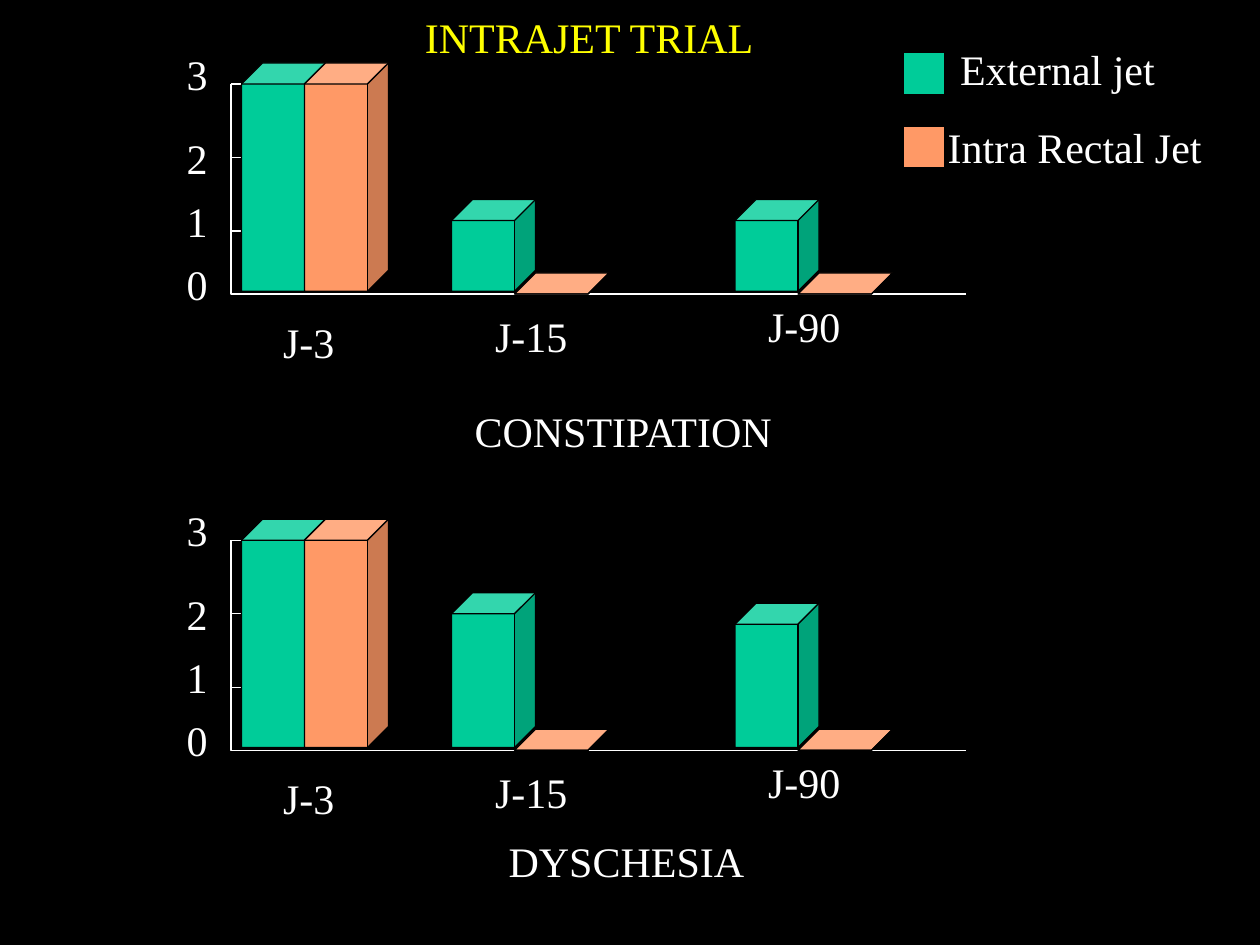
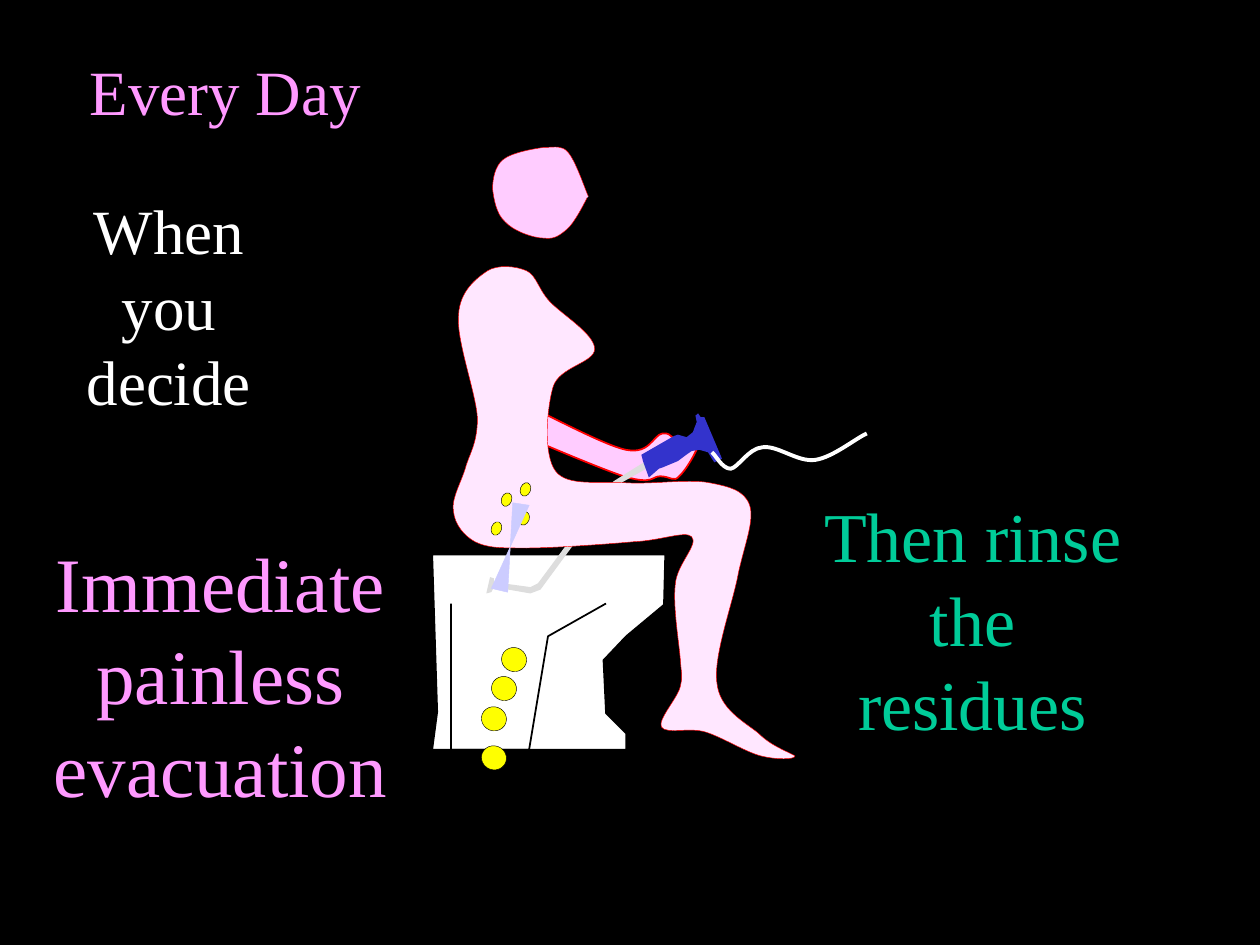
from dataclasses import dataclass
from typing import Optional

from lxml import etree
from pptx import Presentation
from pptx.dml.color import RGBColor
from pptx.enum.shapes import MSO_CONNECTOR as Connector
from pptx.enum.shapes import MSO_SHAPE as Preset
from pptx.enum.text import MSO_ANCHOR as Anchor
from pptx.enum.text import MSO_AUTO_SIZE as AutoSize
from pptx.enum.text import PP_ALIGN as Align
from pptx.oxml.ns import qn
from pptx.util import Pt


@dataclass(frozen=True)
class Theme:
    """Colours, font and type sizes shared by the slides."""
    font: str = "Times New Roman"
    black: str = "000000"
    white: str = "FFFFFF"
    yellow: str = "FFFF00"
    green: str = "00CC99"
    orange: str = "FF9966"
    pink: str = "FF99FF"
    skin: str = "FFE7FF"
    limb: str = "FFCCFF"
    red: str = "FF0000"
    blue: str = "3333CC"
    grey: str = "DDDDDD"
    water: str = "CCCCFF"
    label: float = 24
    heading: float = 36
    rinse: float = 40
    result: float = 44
    space_before: float = 0.06
    hairline: float = 0.25
    thin: float = 0.75
    medium: float = 1
    thick: float = 2.25


THEME = Theme()
GRID = 0.72


@dataclass(frozen=True)
class Box:
    """A rectangle in points."""
    left: float
    top: float
    width: float
    height: float


@dataclass(frozen=True)
class Label:
    """A text with its place and format."""
    text: str
    box: Box
    size: float = THEME.label
    color: str = THEME.white
    wrap: bool = False


@dataclass(frozen=True)
class BarChart:
    """A drawn bar chart: its shift down the slide and the tops of its external jet bars."""
    shift: float
    external_tops: tuple


@dataclass(frozen=True)
class Outline:
    """A freeform on the drawing grid; a curved one lists Bezier anchors and handles."""
    points: tuple
    fill: Optional[str] = None
    line: Optional[str] = None
    line_width: float = THEME.hairline
    curved: bool = False
    closed: bool = False


CHARTS = (BarChart(0, (36, 114, 114)), BarChart(260.7, (36, 78, 84)))
AXIS_LEFT, AXIS_TOP, AXIS_BOTTOM, AXIS_RIGHT = 132, 48, 168, 552
TICKS, TICK_LENGTH = (132, 90, 48), 6
BAR_LEFTS, BAR_WIDTH, BAR_STEP, BAR_BOTTOM = (138, 258, 420), 48, 36, 166.5
CHART_LABELS = (
    Label("3", Box(99.4, 24, 26.6, 36)),
    Label("2", Box(99.4, 72, 26.6, 36)),
    Label("1", Box(99.4, 108, 26.6, 36)),
    Label("0", Box(99.4, 144, 26.6, 36)),
    Label("J-3", Box(154.5, 177.4, 44, 36)),
    Label("J-15", Box(275.6, 174, 56, 36)),
    Label("J-90", Box(431.6, 168, 56, 36)),
)
TRIAL_TITLE = Label("INTRAJET TRIAL", Box(192, 3, 289.4, 36.5), color=THEME.yellow, wrap=True)
TRIAL_LABELS = (
    Label("CONSTIPATION", Box(261.4, 228, 189.4, 36)),
    Label("DYSCHESIA", Box(282.7, 474, 150.5, 36.5)),
    Label("External jet", Box(541, 21.6, 126.7, 36.5)),
    Label("Intra Rectal Jet", Box(511.2, 66.2, 206, 36.5), wrap=True),
)
LEGEND = ((THEME.green, 30), (THEME.orange, 72))

DAY_TITLE = Label("Every Day", Box(25.4, 26.5, 206.6, 51), THEME.heading, THEME.pink, True)
DAY_LABELS = (
    Label("Then rinse the residues", Box(456.5, 278, 198.7, 152.6), THEME.rinse, THEME.green, True),
    Label("When you decide", Box(25.6, 106, 141.8, 138.2), THEME.heading, wrap=True),
    Label("Immediate painless evacuation", Box(16.9, 302.4, 218.2, 167), THEME.result, THEME.pink, True),
)

HEAD = Outline((
    (466, 157), (464, 161), (456, 177), (450, 182), (444, 187), (440, 190), (432, 189),
    (423, 189), (407, 183), (401, 176), (394, 170), (392, 158), (391, 150),
    (391, 142), (393, 132), (399, 127), (406, 121), (424, 118), (432, 117),
    (441, 117), (446, 115), (451, 121), (457, 128), (464, 149), (467, 156),
), THEME.limb, THEME.red, curved=True)
SEAT = Outline((
    (528, 440), (343, 440), (347, 565), (343, 595), (497, 595), (497, 582),
    (481, 566), (479, 524), (497, 505), (527, 480),
), THEME.white, THEME.black, THEME.medium, closed=True)
BOWL = Outline(((481, 479), (435, 505), (420, 595), (358, 595), (358, 479)),
               line=THEME.black, line_width=THEME.medium)
ARM = Outline((
    (383, 304), (402, 312), (469, 349), (493, 356), (516, 363), (518, 345), (526, 344),
    (534, 343), (535, 351), (539, 352), (544, 354), (554, 348), (554, 353),
    (554, 357), (544, 374), (539, 378), (535, 383), (532, 378), (524, 378),
    (517, 378), (519, 385), (495, 378), (471, 370), (404, 341), (381, 331),
), THEME.limb, THEME.red, THEME.medium, curved=True)
WAND = Outline((
    (511, 367), (487, 382), (427, 463), (421, 466), (392, 462), (392, 459), (389, 458),
    (386, 471), (390, 470), (392, 466), (421, 471), (429, 468), (490, 385), (513, 372),
), THEME.grey)
HANDLE = Outline((
    (510, 365), (515, 379), (523, 372), (526, 371), (538, 366), (546, 360), (549, 358),
    (555, 357), (562, 359), (565, 364), (567, 367), (573, 364), (559, 331), (556, 331),
    (554, 328), (552, 330), (553, 335), (551, 340), (550, 343), (545, 347), (538, 345),
    (535, 346), (509, 361), (511, 368),
), THEME.blue)
HOSE = Outline((
    (565, 359), (568, 361), (573, 372), (580, 372), (586, 371), (594, 356), (605, 355),
    (617, 353), (633, 367), (647, 365), (661, 363), (679, 348), (688, 344),
), line=THEME.white, line_width=THEME.thick, curved=True)
BODY = Outline((
    (631, 600), (631, 603), (616, 603), (604, 600), (592, 597), (573, 585), (560, 581),
    (547, 577), (529, 583), (525, 577), (522, 571), (538, 554), (540, 545),
    (542, 536), (541, 537), (540, 523), (539, 510), (534, 481), (536, 464),
    (537, 448), (555, 432), (549, 426), (544, 421), (525, 429), (503, 430),
    (481, 432), (438, 435), (418, 435), (397, 435), (387, 435), (377, 430),
    (368, 425), (361, 416), (360, 406), (358, 397), (365, 385), (369, 373),
    (372, 361), (379, 353), (379, 332), (378, 312), (362, 270), (364, 250),
    (365, 231), (378, 221), (387, 215), (395, 210), (409, 211), (418, 215),
    (426, 219), (427, 229), (436, 239), (445, 249), (472, 265), (472, 277),
    (472, 288), (444, 291), (439, 307), (434, 324), (431, 361), (441, 374),
    (450, 386), (474, 382), (494, 383), (515, 385), (545, 380), (562, 383),
    (578, 386), (591, 389), (595, 401), (599, 413), (591, 432), (586, 455),
    (582, 478), (566, 520), (569, 542), (571, 563), (591, 573), (602, 582),
    (612, 592), (624, 596), (631, 600),
), THEME.skin, THEME.red, curved=True, closed=True)
JET = Outline(((407, 399), (420, 401), (390, 467), (403, 470)),
              THEME.water, THEME.water, closed=True)
FIGURE = (HEAD, SEAT, BOWL, ARM, WAND, HANDLE, HOSE, BODY)
LARGE_DROPS = ((398, 514), (390, 537), (382, 592), (382, 561))
SMALL_DROPS = ((390, 414), (412, 406), (413, 383), (398, 391))
DROP_TILT = 20.2


def rgb(color: str) -> RGBColor:
    """Turn a hex code into a colour."""
    return RGBColor.from_string(color)


def write_text(shape, text: str, *, size: float, color: str, wrap: bool) -> None:
    """Put centred text in a shape and format it."""
    frame = shape.text_frame
    frame.text = text
    frame.word_wrap = wrap
    frame.auto_size = AutoSize.SHAPE_TO_FIT_TEXT
    frame.vertical_anchor = Anchor.TOP
    paragraph = frame.paragraphs[0]
    paragraph.alignment = Align.CENTER
    paragraph.space_before = Pt(round(size * THEME.space_before, 1))
    font = paragraph.runs[0].font
    font.name, font.size = THEME.font, Pt(size)
    font.color.rgb = rgb(color)


def lengths(box: Box) -> tuple:
    """Convert a box to slide lengths."""
    return Pt(box.left), Pt(box.top), Pt(box.width), Pt(box.height)


def add_label(slide, label: Label, shift: float = 0) -> None:
    """Add a text box, moved down by the shift."""
    shape = slide.shapes.add_textbox(*lengths(label.box))
    shape.top += Pt(shift)
    write_text(shape, label.text, size=label.size, color=label.color, wrap=label.wrap)


def add_titled_slide(presentation, title: Label):
    """Add a title-only slide with a placed title."""
    slide = presentation.slides.add_slide(presentation.slide_layouts[5])
    shape = slide.shapes.title
    shape.left, shape.top, shape.width, shape.height = lengths(title.box)
    write_text(shape, title.text, size=title.size, color=title.color, wrap=title.wrap)
    return slide


def paint(shape, fill: Optional[str], line: Optional[str], width: float = THEME.thin) -> None:
    """Set the fill and line of a shape and drop its shadow."""
    shape.shadow.inherit = False
    for target, color in ((shape.fill, fill), (shape.line.fill, line)):
        if color:
            target.solid()
            target.fore_color.rgb = rgb(color)
        else:
            target.background()
    if line:
        shape.line.width = Pt(width)


def add_preset(slide, preset, box: Box, fill: str, width: float = THEME.thin):
    """Add a filled preset shape with a black line."""
    shape = slide.shapes.add_shape(preset, *lengths(box))
    paint(shape, fill, THEME.black, width)
    return shape


def add_cube(slide, box: Box, fill: str, depth: float = 0.25) -> None:
    """Add one bar of a chart."""
    add_preset(slide, Preset.CUBE, box, fill).adjustments[0] = depth


def add_line(slide, left: float, top: float, right: float, bottom: float) -> None:
    """Add a thin white line."""
    line = slide.shapes.add_connector(Connector.STRAIGHT, Pt(left), Pt(top), Pt(right), Pt(bottom))
    line.line.color.rgb = rgb(THEME.white)
    line.line.width = Pt(THEME.thin)
    etree.SubElement(line._element.spPr, qn("a:effectLst"))


def bend(shape) -> None:
    """Join each three line segments of a freeform into one cubic Bezier segment."""
    segments = list(shape._element.iter(qn("a:lnTo")))
    for index in range(0, len(segments), 3):
        curve = etree.Element(qn("a:cubicBezTo"))
        segments[index].addprevious(curve)
        for segment in segments[index:index + 3]:
            curve.append(segment[0])
            segment.getparent().remove(segment)


def add_outline(slide, outline: Outline, unit: float = GRID) -> None:
    """Add a freeform whose coordinates are counted in the unit."""
    start, *rest = [(Pt(x * unit), Pt(y * unit)) for x, y in outline.points]
    builder = slide.shapes.build_freeform(*start)
    builder.add_line_segments(rest, close=outline.closed and not outline.curved)
    shape = builder.convert_to_shape()
    if outline.curved:
        bend(shape)
    paint(shape, outline.fill, outline.line, outline.line_width)


def add_bar_chart(slide, chart: BarChart) -> None:
    """Draw the axes, bars and labels of a chart."""
    shift = chart.shift
    bottom = AXIS_BOTTOM + shift
    axes = ((AXIS_LEFT, AXIS_TOP + shift), (AXIS_LEFT, bottom), (AXIS_RIGHT, bottom))
    add_outline(slide, Outline(axes, line=THEME.white, line_width=THEME.thin), unit=1)
    for tick in TICKS:
        add_line(slide, AXIS_LEFT, tick + shift, AXIS_LEFT + TICK_LENGTH, tick + shift)
    for index, (left, top) in enumerate(zip(BAR_LEFTS, chart.external_tops)):
        bar = Box(left, top + shift, BAR_WIDTH, BAR_BOTTOM - top)
        add_cube(slide, bar, THEME.green)
        if index == 0:
            add_cube(slide, Box(left + BAR_STEP, bar.top, BAR_WIDTH, bar.height), THEME.orange)
        else:
            add_cube(slide, Box(left + BAR_STEP, bottom - 12, 54, 12), THEME.orange, depth=1)
    for label in CHART_LABELS:
        add_label(slide, label, shift)


def build_trial_slide(presentation) -> None:
    """Build the slide with the two trial charts."""
    slide = add_titled_slide(presentation, TRIAL_TITLE)
    for chart in CHARTS:
        add_bar_chart(slide, chart)
    for color, top in LEGEND:
        add_preset(slide, Preset.RECTANGLE, Box(516, top, 24, 24), color)
    for label in TRIAL_LABELS:
        add_label(slide, label)


def build_day_slide(presentation) -> None:
    """Build the slide with the seated figure."""
    slide = add_titled_slide(presentation, DAY_TITLE)
    for outline in FIGURE:
        add_outline(slide, outline)
    for drops, width, height in ((LARGE_DROPS, 14.4, 13.7), (SMALL_DROPS, 5.8, 7.9)):
        for x, y in drops:
            box = Box(x * GRID, y * GRID, width, height)
            add_preset(slide, Preset.OVAL, box, THEME.yellow, THEME.hairline).rotation = DROP_TILT
    add_outline(slide, JET)
    for label in DAY_LABELS:
        add_label(slide, label)


def main() -> None:
    """Build and save the presentation."""
    presentation = Presentation()
    presentation.slide_width, presentation.slide_height = Pt(720), Pt(540)
    background = presentation.slide_master.background.fill
    background.solid()
    background.fore_color.rgb = rgb(THEME.black)
    build_trial_slide(presentation)
    build_day_slide(presentation)
    presentation.save("out.pptx")


if __name__ == "__main__":
    main()
